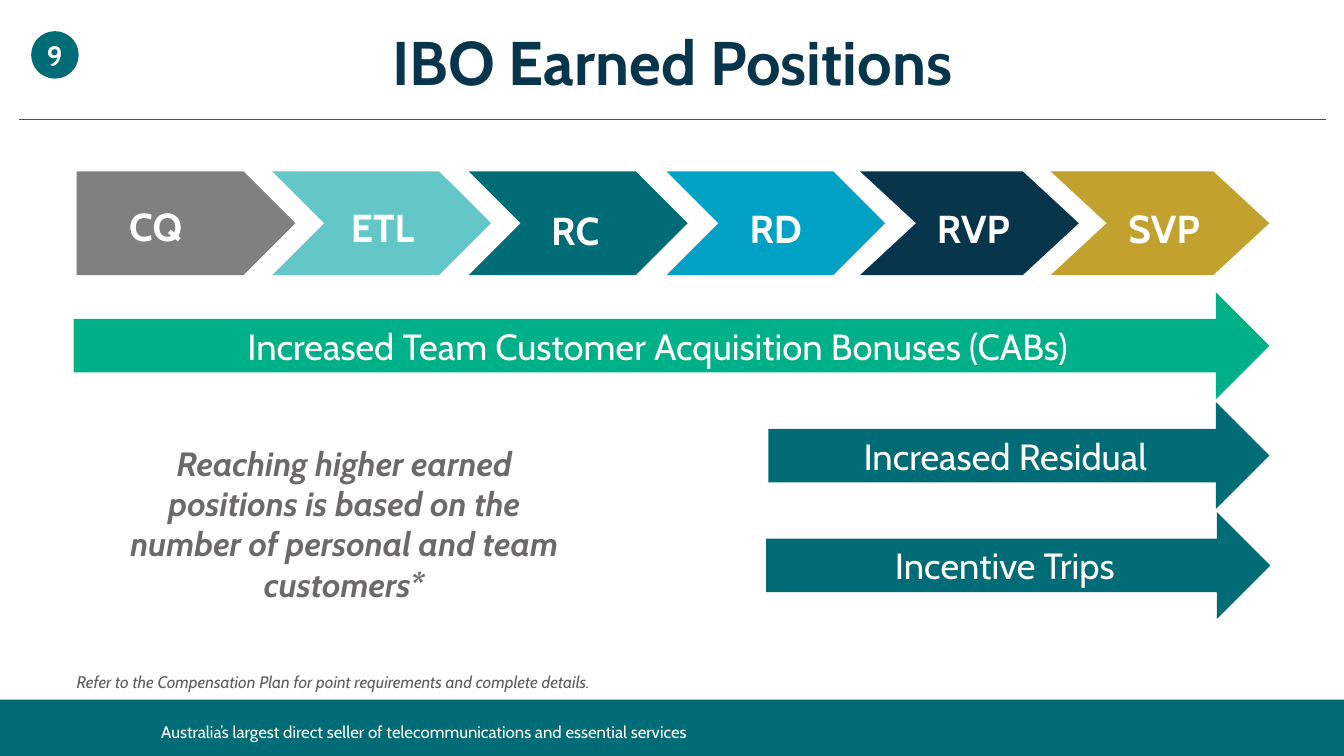
from dataclasses import dataclass

from lxml.etree import SubElement
from pptx import Presentation
from pptx.dml.color import RGBColor
from pptx.enum.shapes import MSO_CONNECTOR, MSO_SHAPE
from pptx.enum.text import MSO_ANCHOR, PP_ALIGN
from pptx.oxml.ns import qn
from pptx.shapes.autoshape import Shape
from pptx.slide import Slide
from pptx.util import Inches, Pt

FONT = "Cabin"
COLORS = {
    "teal": "016B76",
    "navy": "06354C",
    "green": "00B088",
    "aqua": "63C7C8",
    "blue": "01A2C3",
    "gold": "C3A12E",
    "gray": "808080",
    "quote": "6C6969",
    "note": "5E5E5E",
    "white": "FFFFFF",
}


@dataclass(frozen=True)
class Box:
    left: float
    top: float
    width: float
    height: float

    def lengths(self) -> tuple[Inches, ...]:
        return tuple(map(Inches, (self.left, self.top, self.width, self.height)))


@dataclass(frozen=True)
class TextStyle:
    size: float
    color: str = "white"
    bold: bool = False
    italic: bool = False
    align: PP_ALIGN = PP_ALIGN.CENTER
    anchor: MSO_ANCHOR = MSO_ANCHOR.MIDDLE
    inset: float | None = None
    wrap: bool = True
    baseline: int = 0


@dataclass(frozen=True)
class Position:
    name: str
    left: float
    color: str
    label: Box
    preset: MSO_SHAPE = MSO_SHAPE.CHEVRON
    point: float = 0.5


@dataclass(frozen=True)
class Benefit:
    text: str
    box: Box
    color: str = "teal"


TITLE_STYLE = TextStyle(44, "navy", bold=True)
BADGE_STYLE = TextStyle(20, bold=True, inset=0, wrap=False)
POSITION_STYLE = TextStyle(48, bold=True, inset=0, baseline=30000)
BENEFIT_STYLE = TextStyle(26)
QUOTE_STYLE = TextStyle(24, "quote", bold=True, italic=True, anchor=MSO_ANCHOR.TOP)
NOTE_STYLE = TextStyle(12, "note", italic=True, align=PP_ALIGN.LEFT, inset=0.04, wrap=False)
FOOTER_STYLE = TextStyle(12, align=PP_ALIGN.LEFT, anchor=MSO_ANCHOR.TOP)

POSITIONS = [
    Position("CQ", 0.76, "gray", Box(0.98, 1.88, 1.13, 0.89), MSO_SHAPE.PENTAGON),
    Position("ETL", 2.7, "aqua", Box(3.18, 1.93, 1.23, 0.81)),
    Position("RC", 4.65, "teal", Box(5.07, 1.96, 1.27, 0.81)),
    Position("RD", 6.61, "blue", Box(7.08, 1.94, 1.23, 0.81)),
    Position("RVP", 8.53, "navy", Box(9.05, 1.94, 1.21, 0.81), point=0.54),
    Position("SVP", 10.42, "gold", Box(10.94, 1.94, 1.21, 0.81), point=0.54),
]
BENEFITS = [
    Benefit("Incentive Trips", Box(7.6, 5.08, 5, 1.06)),
    Benefit("Increased Residual", Box(7.62, 3.99, 4.97, 1.06)),
    Benefit(
        "Increased Team Customer Acquisition Bonuses (CABs)",
        Box(0.73, 2.9, 11.86, 1.06),
        "green",
    ),
]


def rgb(color: str) -> RGBColor:
    return RGBColor.from_string(COLORS[color])


def write(shape: Shape, text: str, style: TextStyle) -> None:
    frame = shape.text_frame
    frame.text = text
    frame.word_wrap = style.wrap
    frame.vertical_anchor = style.anchor
    if style.inset is not None:
        frame.margin_left = frame.margin_right = Inches(style.inset)
        frame.margin_top = frame.margin_bottom = Inches(style.inset)
    paragraph = frame.paragraphs[0]
    paragraph.alignment = style.align
    run = paragraph.runs[0]
    run.font.name = FONT
    run.font.size = Pt(style.size)
    run.font.bold = style.bold
    run.font.italic = style.italic
    run.font.color.rgb = rgb(style.color)
    if style.baseline:
        run._r.get_or_add_rPr().set("baseline", str(style.baseline))


def add_filled(slide: Slide, preset: MSO_SHAPE, box: Box, color: str) -> Shape:
    shape = slide.shapes.add_shape(preset, *box.lengths())
    shape.shadow.inherit = False
    shape.fill.solid()
    shape.fill.fore_color.rgb = rgb(color)
    shape.line.fill.background()
    return shape


def add_text(slide: Slide, box: Box, text: str, style: TextStyle) -> None:
    write(slide.shapes.add_textbox(*box.lengths()), text, style)


def add_title(slide: Slide, text: str) -> None:
    title = slide.shapes.title
    title.left, title.top, title.width, title.height = Box(0.19, 0.13, 12.96, 1.05).lengths()
    write(title, text, TITLE_STYLE)
    title.text_frame.paragraphs[0].line_spacing = 0.9


def add_title_rule(slide: Slide) -> None:
    rule = slide.shapes.add_connector(
        MSO_CONNECTOR.STRAIGHT, Inches(0.19), Inches(1.18), Inches(13.15), Inches(1.18)
    )
    rule.line.color.rgb = rgb("teal")
    rule.line.width = Pt(0.5)
    SubElement(rule._element.spPr, qn("a:effectLst"))


def add_position(slide: Slide, position: Position) -> None:
    box = Box(position.left, 1.7, 2.17, 1.03)
    arrow = add_filled(slide, position.preset, box, position.color)
    arrow.adjustments[0] = position.point
    add_text(slide, position.label, position.name, POSITION_STYLE)


def add_benefit(slide: Slide, benefit: Benefit) -> None:
    arrow = add_filled(slide, MSO_SHAPE.RIGHT_ARROW, benefit.box, benefit.color)
    write(arrow, benefit.text, BENEFIT_STYLE)


def main() -> None:
    presentation = Presentation()
    presentation.slide_width = Inches(13.33)
    presentation.slide_height = Inches(7.5)
    slide = presentation.slides.add_slide(presentation.slide_layouts.get_by_name("Title Only"))

    add_filled(slide, MSO_SHAPE.RECTANGLE, Box(0, 6.94, 13.33, 0.56), "teal")
    add_text(
        slide,
        Box(1.5, 7.11, 8.55, 0.3),
        "Australia’s largest direct seller of telecommunications and essential services",
        FOOTER_STYLE,
    )
    add_title_rule(slide)
    add_title(slide, "IBO Earned Positions")
    badge = add_filled(slide, MSO_SHAPE.OVAL, Box(0.31, 0.31, 0.47, 0.47), "teal")
    write(badge, "9", BADGE_STYLE)
    add_text(
        slide,
        Box(0.72, 6.62, 5.66, 0.28),
        "Refer to the Compensation Plan for point requirements and complete details.",
        NOTE_STYLE,
    )
    for benefit in BENEFITS:
        add_benefit(slide, benefit)
    add_text(
        slide,
        Box(1.05, 4.34, 4.73, 1.72),
        "Reaching higher earned positions is based on the number of personal and team customers*",
        QUOTE_STYLE,
    )
    for position in POSITIONS:
        add_position(slide, position)
    presentation.save("out.pptx")


if __name__ == "__main__":
    main()
